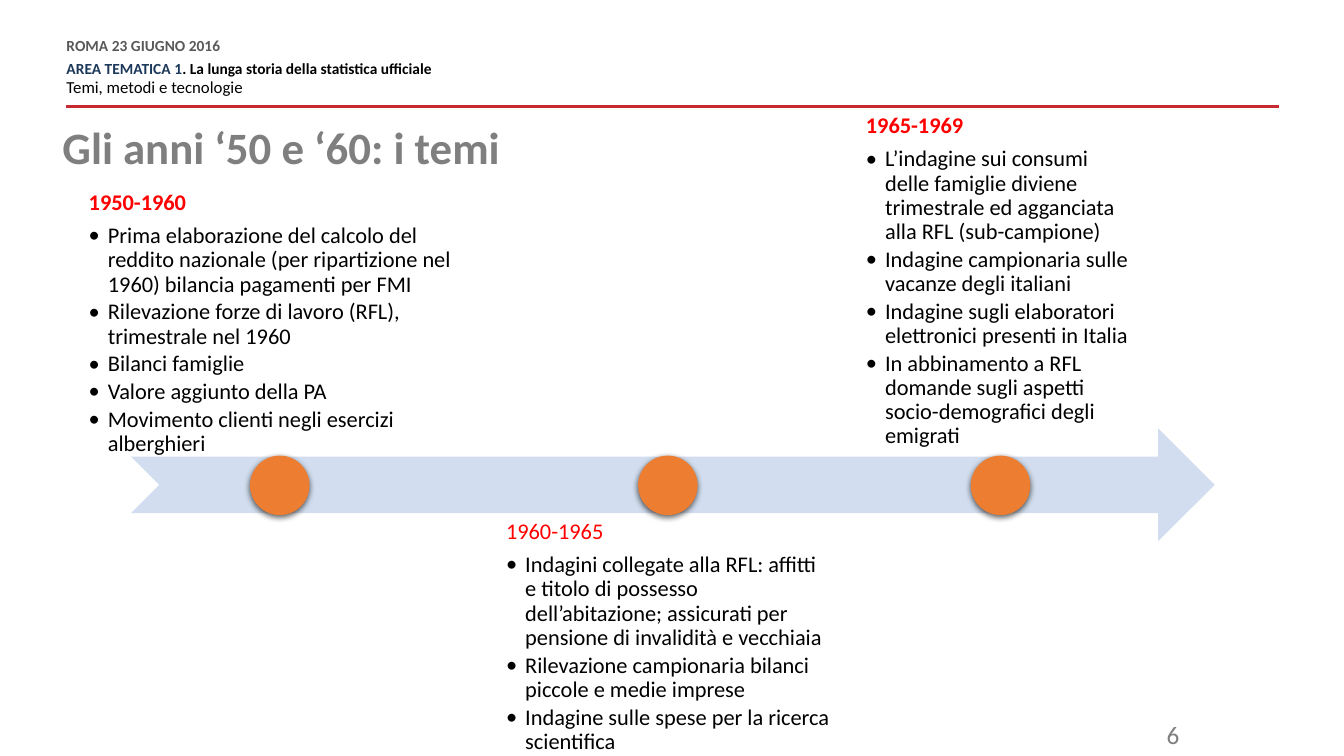
from lxml.etree import SubElement
from pptx import Presentation
from pptx.dml.color import RGBColor
from pptx.enum.shapes import MSO_CONNECTOR as Connector, MSO_SHAPE as Shape
from pptx.enum.text import MSO_ANCHOR as Anchor, MSO_AUTO_SIZE as AutoSize, PP_ALIGN as Align
from pptx.oxml.ns import qn
from pptx.util import Inches, Pt

WIDTH, HEIGHT = Inches(13.33), Inches(7.5)
TITLE_ONLY = 5
FONT = "Calibri"
BLACK = RGBColor(0x00, 0x00, 0x00)
RED = RGBColor(0xFF, 0x00, 0x00)
RULE_RED = RGBColor(0xC7, 0x2A, 0x31)
NAVY = RGBColor(0x1C, 0x38, 0x5A)
DARK_GREY = RGBColor(0x59, 0x59, 0x59)
GREY = RGBColor(0x7F, 0x7F, 0x7F)
PALE_BLUE = RGBColor(0xD2, 0xDE, 0xEF)
ORANGE = RGBColor(0xED, 0x7D, 0x31)

PERIOD_HEIGHT = 31.47
PERIODS = [
    {"place": (5.7, 30.53, 30.23, PERIOD_HEIGHT), "dot": 18.6, "anchor": Anchor.BOTTOM,
     "years": "1950-1960", "bold": True, "topics": [
         "Prima elaborazione del calcolo del reddito nazionale (per ripartizione nel 1960) "
         "bilancia pagamenti per FMI",
         "Rilevazione forze di lavoro (RFL), trimestrale nel 1960",
         "Bilanci famiglie",
         "Valore aggiunto della PA",
         "Movimento clienti negli esercizi alberghieri"]},
    {"place": (36.75, 67.2, 26.03, PERIOD_HEIGHT), "dot": 47.48, "anchor": Anchor.TOP,
     "years": "1960-1965", "bold": False, "topics": [
         "Indagini collegate alla RFL: affitti e titolo di possesso dell’abitazione; "
         "assicurati per pensione di invalidità e vecchiaia",
         "Rilevazione campionaria bilanci piccole e medie imprese",
         "Indagine sulle spese per la ricerca scientifica"]},
    {"place": (63.53, 29.47, 21.98, PERIOD_HEIGHT), "dot": 72.23, "anchor": Anchor.BOTTOM,
     "years": "1965-1969", "bold": True, "topics": [
         "L’indagine sui consumi delle famiglie diviene trimestrale ed agganciata "
         "alla RFL (sub-campione)",
         "Indagine campionaria sulle vacanze degli italiani",
         "Indagine sugli elaboratori elettronici presenti in Italia",
         "In abbinamento a RFL domande sugli aspetti socio-demografici degli emigrati"]},
]


def across(percent):
    return int(WIDTH * percent / 100)


def down(percent):
    return int(HEIGHT * percent / 100)


def placed(left, top, width, height):
    return across(left), down(top), across(width), down(height)


def apply(target, values):
    for name, value in values.items():
        setattr(target, name, value)


def set_frame(frame, inset, anchor=Anchor.TOP):
    apply(frame, {"word_wrap": True, "auto_size": AutoSize.NONE, "vertical_anchor": anchor,
                  "margin_left": inset, "margin_right": inset,
                  "margin_top": inset, "margin_bottom": inset})


def add_text_box(page, place, inset, anchor=Anchor.TOP):
    frame = page.shapes.add_textbox(*placed(*place)).text_frame
    set_frame(frame, inset, anchor)
    return frame


def add_span(para, text, size, color, bold=False):
    span = para.add_run()
    span.text = text
    apply(span.font, {"name": FONT, "size": Pt(size), "bold": bold})
    span.font.color.rgb = color


def next_para(frame, **values):
    first = frame.paragraphs[0]
    para = frame.add_paragraph() if first.runs else first
    apply(para, values)
    return para


def add_bullet(para):
    properties = para._p.get_or_add_pPr()
    properties.set("marL", str(Inches(0.19)))
    properties.set("indent", str(-Inches(0.19)))
    SubElement(properties, qn("a:buFont"), typeface=FONT)
    SubElement(properties, qn("a:buChar"), char="•")


def add_period(page, period):
    frame = add_text_box(page, period["place"], Inches(0.12), period["anchor"])
    heading = next_para(frame, line_spacing=0.9, space_after=Pt(6.5))
    add_span(heading, period["years"], 16, RED, period["bold"])
    for topic in period["topics"]:
        para = next_para(frame, level=1, line_spacing=0.9, space_after=Pt(2.6))
        add_bullet(para)
        add_span(para, topic, 16, BLACK)


def add_filled(page, kind, box, color):
    shape = page.shapes.add_shape(kind, *box)
    shape.shadow.inherit = False
    shape.fill.solid()
    shape.fill.fore_color.rgb = color
    shape.line.fill.background()
    return shape


def add_dot(page, left):
    size = Inches(0.59)
    dot = add_filled(page, Shape.OVAL, (across(left), down(60.27), size, size), ORANGE)
    effects = dot.element.spPr.find(qn("a:effectLst"))
    shadow = SubElement(effects, qn("a:outerShdw"), blurRad=str(Pt(4.5)), dist=str(Pt(1.5)),
                        dir="5400000", algn="ctr", rotWithShape="0")
    tint = SubElement(shadow, qn("a:srgbClr"), val=str(BLACK))
    SubElement(tint, qn("a:alpha"), val="63000")


def add_header(page):
    rule = page.shapes.add_connector(Connector.STRAIGHT, across(95.18), down(14.13),
                                     across(4.95), down(14.13))
    rule.line.color.rgb = RULE_RED
    rule.line.width = Pt(2)
    SubElement(rule.element.spPr, qn("a:effectLst"))
    frame = add_text_box(page, (4.95, 5.2, 62.55, 7.87), 0)
    spacing = Pt(10.8)
    event = next_para(frame, line_spacing=spacing, space_after=Pt(6))
    add_span(event, "ROMA 23 GIUGNO 2016", 11, DARK_GREY, True)
    area = next_para(frame, line_spacing=spacing)
    add_span(area, "AREA TEMATICA 1", 11, NAVY, True)
    add_span(area, ". La lunga storia della statistica ufficiale", 11, BLACK, True)
    subject = next_para(frame, line_spacing=spacing, space_before=Pt(3), space_after=Pt(6))
    add_span(subject, "Temi, metodi e tecnologie", 12, BLACK)


def add_title(page, text):
    title = page.shapes.title
    apply(title, dict(zip(("left", "top", "width", "height"), placed(4.65, 16.67, 90.83, 7.6))))
    set_frame(title.text_frame, 0)
    para = next_para(title.text_frame, alignment=Align.LEFT, line_spacing=0.9)
    add_span(para, text, 32, GREY, True)


def add_page_number(page, number):
    frame = add_text_box(page, (66, 94.53, 22.5, 5.33), Inches(0.1))
    frame.margin_top = frame.margin_bottom = Inches(0.05)
    add_span(next_para(frame, alignment=Align.RIGHT), number, 18, GREY)


def main():
    deck = Presentation()
    apply(deck, {"slide_width": WIDTH, "slide_height": HEIGHT})
    page = deck.slides.add_slide(deck.slide_layouts[TITLE_ONLY])
    add_header(page)
    add_title(page, "Gli anni ‘50 e ‘60: i temi")
    add_page_number(page, "6")
    add_filled(page, Shape.NOTCHED_RIGHT_ARROW, placed(9.75, 56.67, 80.63, 14.93), PALE_BLUE)
    for period in PERIODS:
        add_period(page, period)
        add_dot(page, period["dot"])
    deck.save("out.pptx")


if __name__ == "__main__":
    main()
